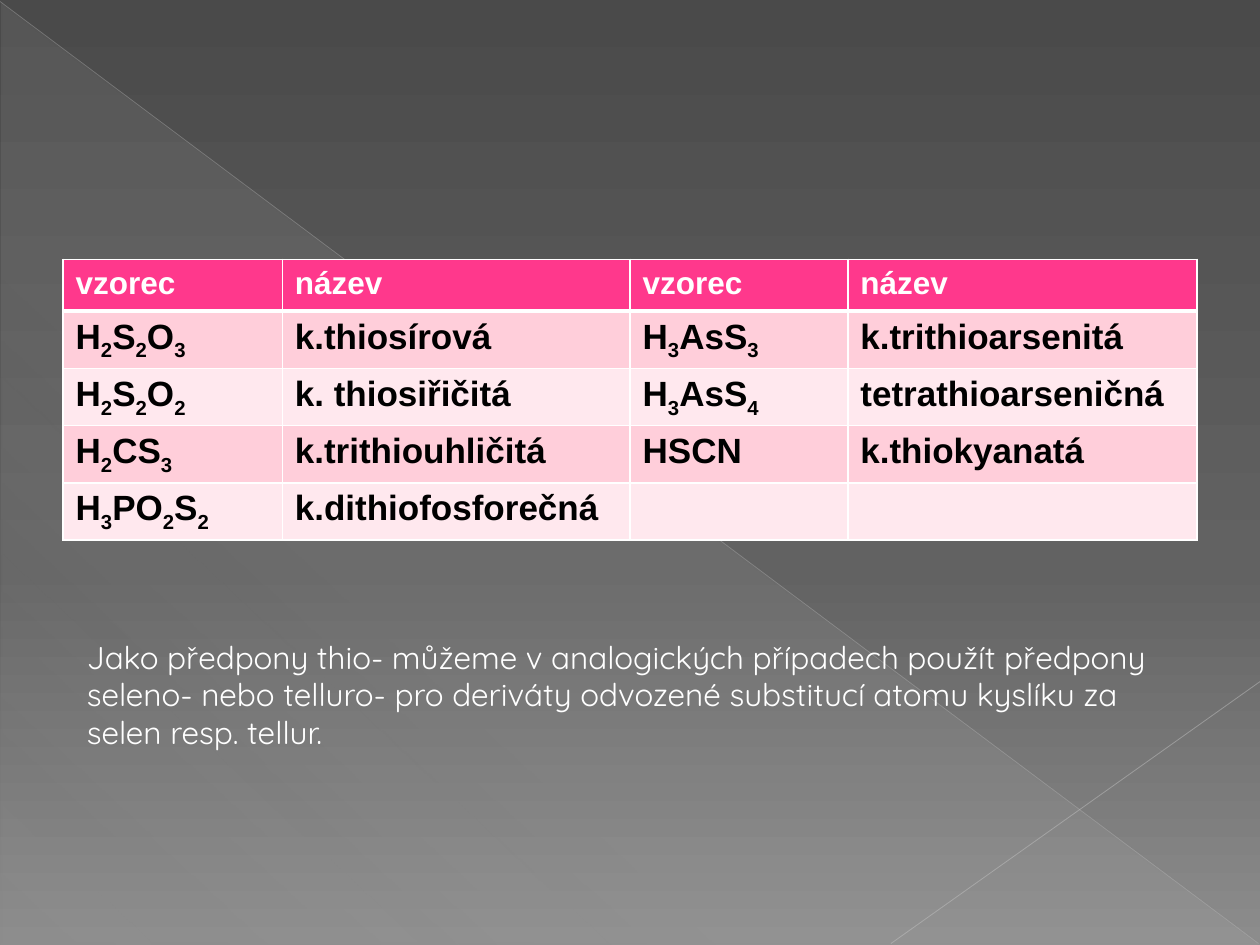
"""Build a slide with a table of thioacids and a note on related prefixes."""
from itertools import groupby

from lxml import etree
from pptx import Presentation, util as u
from pptx.dml.color import RGBColor
from pptx.enum import shapes, text
from pptx.oxml import ns

HEADINGS = ("vzorec", "název", "vzorec", "název")
ACIDS = [
    ("H2S2O3", "k.thiosírová", "H3AsS3", "k.trithioarsenitá"),
    ("H2S2O2", "k. thiosiřičitá", "H3AsS4", "tetrathioarseničná"),
    ("H2CS3", "k.trithiouhličitá", "HSCN", "k.thiokyanatá"),
    ("H3PO2S2", "k.dithiofosforečná", "", ""),
]
NOTE = ("Jako předpony thio- můžeme v analogických případech použít předpony "
        "seleno- nebo telluro- pro deriváty odvozené substitucí atomu kyslíku "
        "za selen resp. tellur.")

THEME = {
    "table_font": "Arial", "note_font": "Quicksand",
    "heading_size": 18, "acid_size": 20, "note_size": 18,
    "light": "FFFFFF", "dark": "000000",
    "heading_fill": "FF388C", "bands": ("FFCEDA", "FFE8EE"),
    "backdrop": [(0, "4A4A4A", 100), (60, "626262", 100), (100, "8C8C8C", 100)],
    "sheen": [(0, "D2D2D2", 10), (70, "D2D2D2", 8), (100, "D2D2D2", 1)],
}
DIAGONALS = [
    ((0, 0.03, 25.37, 19.02), "BFBFBF", 0.39, 35),
    ((25.4, 13.74, 17.96, 19.02), "C6C6C6", 0.47, 45),
]
SHEEN_BOX = (0.03, 0.05, 25.37, 19)
NOTE_BOX = (1.5, 12.73, 22.4, 1.8)
TABLE_LEFT, TABLE_TOP, ROW_HEIGHT = 1.27, 5.23, 1.04
COLUMNS = (4.42, 7.01, 4.39, 7.04)


def cm(values):
    return [u.Cm(value) for value in values]


def add(parent, tag, **attributes):
    return etree.SubElement(parent, ns.qn(tag), attributes)


def add_color(parent, color, opacity=100):
    rgb = add(parent, "a:srgbClr", val=color)
    if opacity < 100:
        add(rgb, "a:alpha", val=str(opacity * 1000))


def set_gradient(fill, owner, stops, angle):
    fill.gradient()
    fill.gradient_angle = 360 - angle
    stop_list = next(owner.iter(ns.qn("a:gsLst")))
    stop_list.clear()
    for position, color, opacity in stops:
        add_color(add(stop_list, "a:gs", pos=str(position * 1000)), color, opacity)


def add_run(paragraph, words, font, size, color, bold=False):
    run = paragraph.add_run()
    run.text = words
    run.font.name, run.font.size, run.font.bold = font, u.Pt(size), bold
    run.font.color.rgb = RGBColor.from_string(color)
    return run


def add_backdrop(slide):
    set_gradient(slide.background.fill, slide.element, THEME["backdrop"], 90)
    sheen = slide.shapes.add_shape(shapes.MSO_SHAPE.RIGHT_TRIANGLE, *cm(SHEEN_BOX))
    sheen.shadow.inherit = False
    sheen.line.fill.background()
    set_gradient(sheen.fill, sheen.element, THEME["sheen"], 133)
    for ends, color, width, opacity in DIAGONALS:
        diagonal = slide.shapes.add_connector(shapes.MSO_CONNECTOR.STRAIGHT, *cm(ends))
        diagonal.line.width = u.Pt(width)
        diagonal.line.color.rgb = RGBColor.from_string(color)
        rgb = next(diagonal.element.iter(ns.qn("a:srgbClr")))
        add(rgb, "a:alpha", val=str(opacity * 1000))
        add(diagonal.element.spPr, "a:effectLst")


def set_borders(cell, top, bottom):
    properties = cell._tc.get_or_add_tcPr()
    for index, (side, width) in enumerate(zip("LRTB", (1, 1, top, bottom))):
        border = etree.Element(ns.qn(f"a:ln{side}"), w=str(u.Pt(width)))
        add_color(add(border, "a:solidFill"), THEME["light"])
        properties.insert(index, border)


def add_acids(slide):
    rows = [HEADINGS, *ACIDS]
    frame = slide.shapes.add_table(
        len(rows), len(COLUMNS),
        *cm((TABLE_LEFT, TABLE_TOP, sum(COLUMNS), ROW_HEIGHT * len(rows))))
    acids = frame.table
    for column, width in zip(acids.columns, COLUMNS):
        column.width = u.Cm(width)
    for r, row in enumerate(rows):
        acids.rows[r].height = u.Cm(ROW_HEIGHT)
        kind, ink = ("acid", "dark") if r else ("heading", "light")
        fill = THEME["bands"][(r - 1) % 2] if r else THEME["heading_fill"]
        for c, words in enumerate(row):
            cell = acids.cell(r, c)
            cell.fill.solid()
            cell.fill.fore_color.rgb = RGBColor.from_string(fill)
            set_borders(cell, 3 if r == 1 else 1, 3 if r == 0 else 1)
            for subscript, letters in groupby(words, str.isdigit):
                run = add_run(cell.text_frame.paragraphs[0], "".join(letters),
                              THEME["table_font"], THEME[f"{kind}_size"],
                              THEME[ink], True)
                if subscript:
                    run._r.get_or_add_rPr().set("baseline", "-25000")


def add_note(slide):
    note = slide.shapes.add_textbox(*cm(NOTE_BOX)).text_frame
    note.word_wrap = True
    note.auto_size = text.MSO_AUTO_SIZE.SHAPE_TO_FIT_TEXT
    add_run(note.paragraphs[0], NOTE, THEME["note_font"], THEME["note_size"],
            THEME["light"])


def main():
    deck = Presentation()
    deck.slide_width, deck.slide_height = cm((25.4, 19.05))
    slide = deck.slides.add_slide(deck.slide_layouts[6])
    add_backdrop(slide)
    add_acids(slide)
    add_note(slide)
    deck.save("out.pptx")


if __name__ == "__main__":
    main()
